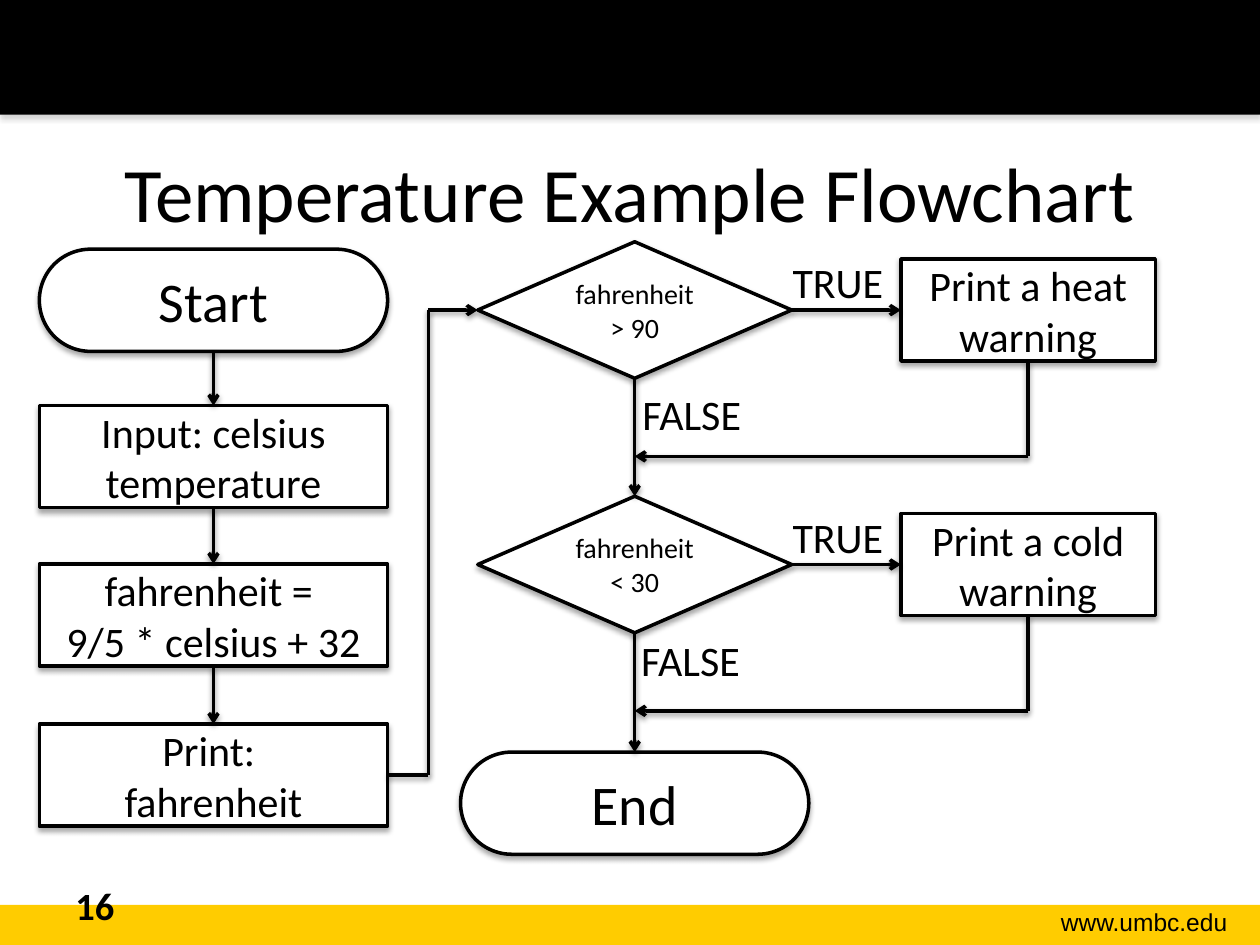
from lxml import etree
from pptx import Presentation
from pptx.dml.color import RGBColor
from pptx.enum import shapes, text
from pptx.oxml import ns
from pptx.util import Pt

COLORS = {"black": "000000", "white": "FFFFFF", "gold": "FFCC00", "gray": "808080"}


def write(frame, words, size=24, font="Calibri", bold=False,
          align=text.PP_ALIGN.CENTER, anchor=text.MSO_ANCHOR.MIDDLE):
    frame.word_wrap = True
    frame.vertical_anchor = anchor
    line = frame.paragraphs[0]
    line.text = words
    line.alignment = align
    for run in line.runs:
        run.font.size = Pt(size)
        run.font.name = font
        run.font.bold = bold
        run.font.color.rgb = RGBColor.from_string(COLORS["black"])


def cast_shadow(drawn, color="black", opacity=35, distance=1.8):
    effects = etree.SubElement(drawn._element.spPr, ns.qn("a:effectLst"))
    outer = etree.SubElement(effects, ns.qn("a:outerShdw"), blurRad=str(Pt(3.1)),
                             dist=str(Pt(distance)), dir="5400000", rotWithShape="0")
    tint = etree.SubElement(outer, ns.qn("a:srgbClr"), val=COLORS[color])
    etree.SubElement(tint, ns.qn("a:alpha"), val=str(opacity * 1000))


deck = Presentation()
deck.slide_width, deck.slide_height = Pt(720), Pt(540)
slide = deck.slides.add_slide(deck.slide_layouts[5])
canvas = slide.shapes

# Title
title = canvas.title
title.left, title.top, title.width, title.height = Pt(36), Pt(64.8), Pt(648), Pt(90)
write(title.text_frame, "Temperature Example Flowchart", size=44)

# Header and footer bars
for top, height, color in [(517, 23, "gold"), (0, 65.5, "black")]:
    bar = canvas.add_shape(shapes.MSO_SHAPE.RECTANGLE, 0, Pt(top), Pt(720), Pt(height))
    bar.fill.solid()
    bar.fill.fore_color.rgb = RGBColor.from_string(COLORS[color])
    bar.line.fill.background()
    if color == "black":
        cast_shadow(bar, color="gray")
    else:
        bar.shadow.inherit = False

# Footer text
address = canvas.add_textbox(Pt(565), Pt(515), Pt(143.5), Pt(24.2))
write(address.text_frame, "www.umbc.edu", size=14, font="Arial",
      align=text.PP_ALIGN.RIGHT, anchor=text.MSO_ANCHOR.TOP)
page_number = canvas.add_textbox(Pt(36), Pt(500.4), Pt(168), Pt(28.8))
write(page_number.text_frame, "16", size=22, bold=True,
      align=text.PP_ALIGN.LEFT, anchor=text.MSO_ANCHOR.TOP)

# Flowchart grid: column centres, sizes and row centres
INPUT_X, TEST_X, WARNING_X = 122, 362.7, 587.5
STEP_W, STEP_H = 199, 58.4
TEST_W, TEST_H = 179.4, 78
WARNING_W = 145.4
START_Y, READ_Y, CONVERT_Y, PRINT_Y, END_Y = 171.6, 261, 351.5, 443, 459
HEAT_Y, COLD_Y = 177.2, 322.6
MERGE_DROP = 83.6
RISER_X = 244.8

# Connectors: x1, y1, x2, y2, has arrowhead
half_step, half_test = STEP_H / 2, TEST_H / 2
flows = [(INPUT_X, above + half_step, INPUT_X, below - half_step, True)
         for above, below in [(START_Y, READ_Y), (READ_Y, CONVERT_Y), (CONVERT_Y, PRINT_Y)]]
flows += [(INPUT_X + STEP_W / 2, PRINT_Y, RISER_X, PRINT_Y, False),
          (RISER_X, PRINT_Y, RISER_X, HEAT_Y, False),
          (RISER_X, HEAT_Y, TEST_X - TEST_W / 2, HEAT_Y, True)]
for y, next_top in [(HEAT_Y, COLD_Y - half_test), (COLD_Y, END_Y - half_step)]:
    flows += [(TEST_X + TEST_W / 2, y, WARNING_X - WARNING_W / 2, y, True),
              (TEST_X, y + half_test, TEST_X, next_top, True),
              (WARNING_X, y + half_step, WARNING_X, y + MERGE_DROP, False),
              (WARNING_X, y + MERGE_DROP, TEST_X, y + MERGE_DROP, True)]

# Steps: preset, centre x, centre y, width, height, text, size
BOX = shapes.MSO_SHAPE.RECTANGLE
PILL = shapes.MSO_SHAPE.ROUNDED_RECTANGLE
DIAMOND = shapes.MSO_SHAPE.FLOWCHART_DECISION
steps = [
    (PILL, INPUT_X, START_Y, STEP_W, STEP_H, "Start", 32),
    (BOX, INPUT_X, READ_Y, STEP_W, STEP_H, "Input: celsius temperature", 24),
    (BOX, INPUT_X, CONVERT_Y, STEP_W, STEP_H, "fahrenheit = \n9/5 * celsius + 32", 24),
    (BOX, INPUT_X, PRINT_Y, STEP_W, STEP_H, "Print: \nfahrenheit", 24),
    (DIAMOND, TEST_X, HEAT_Y, TEST_W, TEST_H, "fahrenheit > 90", 16),
    (BOX, WARNING_X, HEAT_Y, WARNING_W, STEP_H, "Print a heat warning", 24),
    (DIAMOND, TEST_X, COLD_Y, TEST_W, TEST_H, "fahrenheit < 30", 16),
    (BOX, WARNING_X, COLD_Y, WARNING_W, STEP_H, "Print a cold warning", 24),
    (PILL, TEST_X, END_Y, STEP_W, STEP_H, "End", 32),
]
for preset, x, y, width, height, words, size in steps:
    step = canvas.add_shape(preset, Pt(x - width / 2), Pt(y - height / 2),
                            Pt(width), Pt(height))
    if preset == PILL:
        step.adjustments[0] = 0.5
    step.fill.solid()
    step.fill.fore_color.rgb = RGBColor.from_string(COLORS["white"])
    step.line.color.rgb = RGBColor.from_string(COLORS["black"])
    step.line.width = Pt(2)
    cast_shadow(step)
    write(step.text_frame, words, size=size)

for x1, y1, x2, y2, has_head in flows:
    flow = canvas.add_connector(shapes.MSO_CONNECTOR.STRAIGHT, Pt(x1), Pt(y1), Pt(x2), Pt(y2))
    flow.line.color.rgb = RGBColor.from_string(COLORS["black"])
    flow.line.width = Pt(2)
    if has_head:
        etree.SubElement(flow.line._get_or_add_ln(), ns.qn("a:tailEnd"), type="arrow")
    cast_shadow(flow, opacity=38, distance=1.6)

# Branch labels
for left, top, words in [(421.2, 143.3, "TRUE"), (337.7, 218.2, "FALSE"),
                         (421.2, 288.7, "TRUE"), (337, 359.3, "FALSE")]:
    branch = canvas.add_textbox(Pt(left), Pt(top), Pt(115.2), Pt(36))
    write(branch.text_frame, words, anchor=text.MSO_ANCHOR.TOP)

deck.save("out.pptx")
